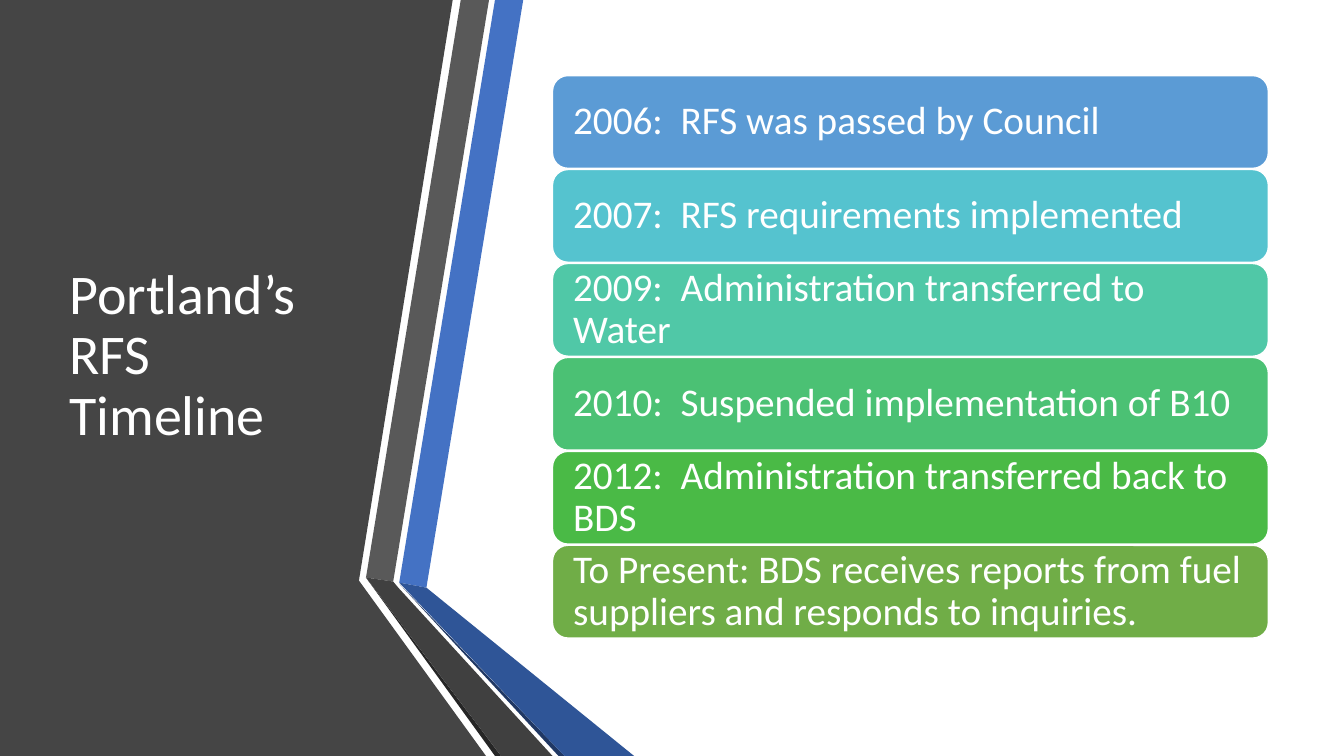
from pptx import Presentation
from pptx.dml.color import RGBColor
from pptx.enum.shapes import MSO_SHAPE
from pptx.enum.text import MSO_ANCHOR, PP_ALIGN
from pptx.util import Pt

PX = 9144
SLIDE_WIDTH, SLIDE_HEIGHT = 1333, 750
FONT = "Calibri"
WHITE = RGBColor(0xFF, 0xFF, 0xFF)
PANEL_GRAY = RGBColor(0x45, 0x45, 0x45)
BLUE = RGBColor(0x44, 0x72, 0xC4)
BLUE_SHADE = RGBColor(0x2F, 0x55, 0x97)
BLUE_EDGE = RGBColor(0x20, 0x38, 0x64)
GRAY = RGBColor(0x59, 0x59, 0x59)
GRAY_SHADE = RGBColor(0x40, 0x40, 0x40)
GRAY_EDGE = RGBColor(0x26, 0x26, 0x26)

TITLE = "Portland’s RFS Timeline"
TITLE_BOX = (59, 75, 304, 558)

EVENTS = [
    ("2006:  RFS was passed by Council", RGBColor(0x5B, 0x9B, 0xD5)),
    ("2007:  RFS requirements implemented", RGBColor(0x55, 0xC3, 0xCF)),
    ("2009:  Administration transferred to Water", RGBColor(0x50, 0xC8, 0xA7)),
    ("2010:  Suspended implementation of B10", RGBColor(0x4B, 0xC1, 0x74)),
    ("2012:  Administration transferred back to BDS", RGBColor(0x4A, 0xBA, 0x46)),
    ("To Present: BDS receives reports from fuel suppliers and responds to inquiries.",
     RGBColor(0x70, 0xAD, 0x47)),
]
BARS_LEFT, BARS_TOP, BARS_BOTTOM = 548, 75, 633
BAR_WIDTH, BAR_HEIGHT = 710, 92
BAR_INSET = 16

BANDS = [
    (PANEL_GRAY, [(0, 0), (449, 0), (356, 576), (482, 750), (0, 750)]),
    (BLUE, [(396, 578), (423, 583), (519, 0), (491, 0)]),
    (GRAY, [(485, 0), (457, 0), (363, 573), (390, 577)]),
    (GRAY_EDGE, [(363, 573), (491, 750), (497, 750)]),
    (BLUE_EDGE, [(396, 579), (554, 750), (560, 750)]),
    (BLUE_SHADE, [(396, 578), (560, 750), (629, 750), (423, 583)]),
    (GRAY_SHADE, [(363, 573), (497, 750), (548, 750), (395, 583), (390, 577)]),
]


def paint(shape, color):
    shape.shadow.inherit = False
    shape.fill.solid()
    shape.fill.fore_color.rgb = color


def add_band(slide, color, points):
    builder = slide.shapes.build_freeform(*points[0], scale=PX)
    builder.add_line_segments(points[1:], close=True)
    band = builder.convert_to_shape()
    paint(band, color)
    band.line.fill.background()


def write(shape, text, size):
    frame = shape.text_frame
    frame.word_wrap = True
    frame.vertical_anchor = MSO_ANCHOR.MIDDLE
    paragraph = frame.paragraphs[0]
    paragraph.text = text
    paragraph.alignment = PP_ALIGN.LEFT
    paragraph.line_spacing = 0.9
    paragraph.font.name = FONT
    paragraph.font.size = Pt(size)
    paragraph.font.color.rgb = WHITE


def add_bar(slide, top, text, color):
    bar = slide.shapes.add_shape(
        MSO_SHAPE.ROUNDED_RECTANGLE,
        BARS_LEFT * PX, round(top * PX), BAR_WIDTH * PX, BAR_HEIGHT * PX)
    paint(bar, color)
    bar.line.color.rgb = WHITE
    bar.line.width = Pt(1)
    frame = bar.text_frame
    frame.margin_left = frame.margin_right = BAR_INSET * PX
    frame.margin_top = frame.margin_bottom = 0
    write(bar, text, 28)


def main():
    presentation = Presentation()
    presentation.slide_width = SLIDE_WIDTH * PX
    presentation.slide_height = SLIDE_HEIGHT * PX
    slide = presentation.slides.add_slide(presentation.slide_layouts[6])

    for color, points in BANDS:
        add_band(slide, color, points)

    title = slide.shapes.add_textbox(*(length * PX for length in TITLE_BOX))
    write(title, TITLE, 40)

    pitch = (BARS_BOTTOM - BARS_TOP - BAR_HEIGHT) / (len(EVENTS) - 1)
    for index, (text, color) in enumerate(EVENTS):
        add_bar(slide, BARS_TOP + index * pitch, text, color)

    presentation.save("out.pptx")


if __name__ == "__main__":
    main()
